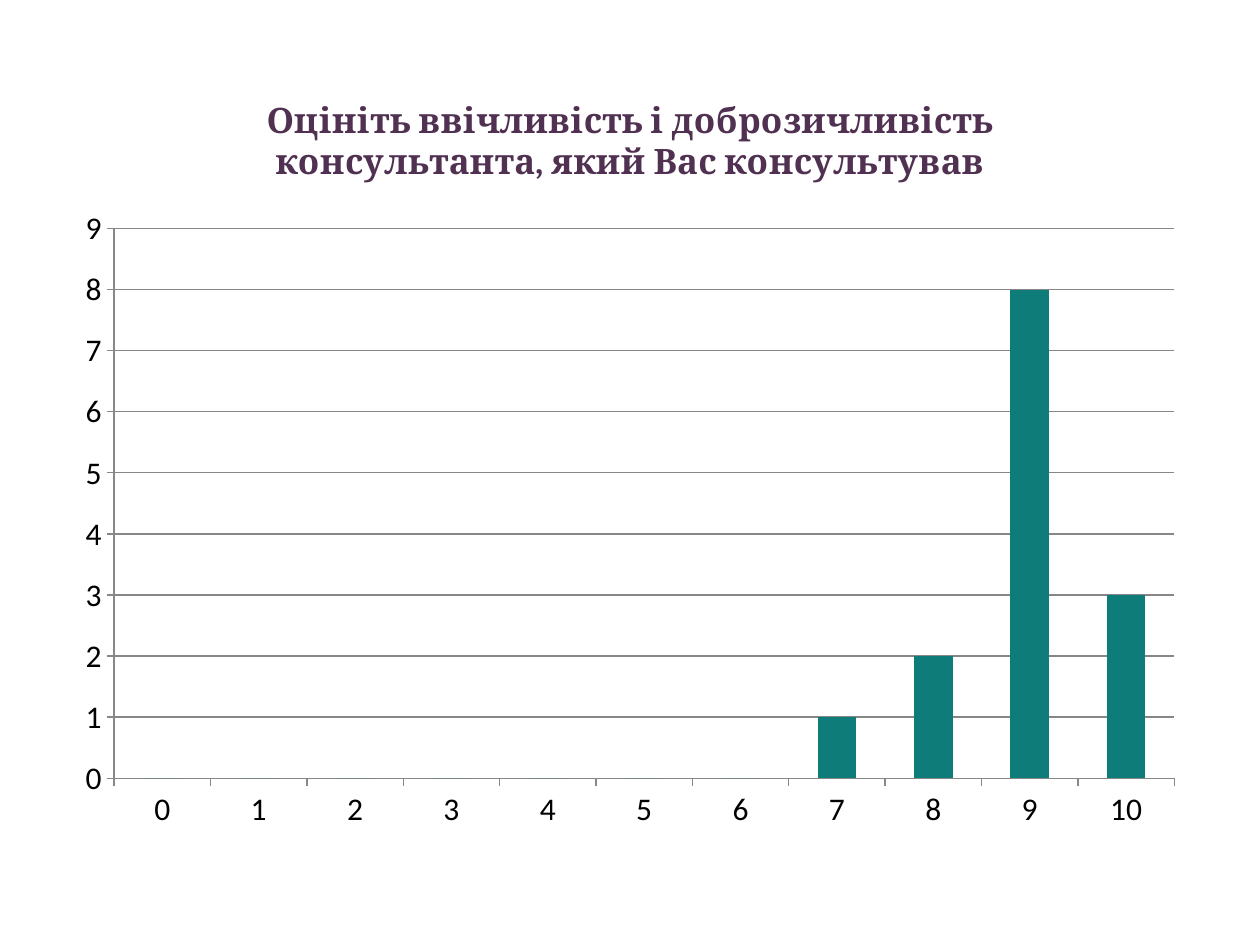
from pptx import Presentation
from pptx.chart.data import CategoryChartData
from pptx.dml.color import RGBColor
from pptx.enum.chart import XL_CHART_TYPE, XL_TICK_MARK
from pptx.util import Cm, Pt

BLACK = RGBColor(0x00, 0x00, 0x00)
GRAY = RGBColor(0x87, 0x87, 0x87)
PLUM = RGBColor(0x51, 0x31, 0x51)
TEAL = RGBColor(0x0E, 0x7C, 0x79)

QUESTION = "Оцініть ввічливість і доброзичливість консультанта, який Вас консультував"
ANSWERS = [0, 0, 0, 0, 0, 0, 0, 1, 2, 8, 3]


def format_font(font, name, size, color, bold=False):
    font.name = name
    font.size = Pt(size)
    font.color.rgb = color
    font.bold = bold


def write_text(text_frame, text, **font_format):
    run = text_frame.paragraphs[0].add_run()
    run.text = text
    format_font(run.font, **font_format)


def style_axis(axis, gridlines):
    axis.major_tick_mark = XL_TICK_MARK.OUTSIDE
    axis.minor_tick_mark = XL_TICK_MARK.NONE
    axis.format.line.color.rgb = GRAY
    axis.has_major_gridlines = gridlines
    if gridlines:
        axis.major_gridlines.format.line.color.rgb = GRAY


def add_rating_chart(slide, left, top, width, height):
    ratings = CategoryChartData(number_format="General")
    ratings.categories = [str(score) for score in range(len(ANSWERS))]
    ratings.add_series("Series 1", ANSWERS)
    chart = slide.shapes.add_chart(
        XL_CHART_TYPE.COLUMN_CLUSTERED, left, top, width, height, ratings
    ).chart
    format_font(chart.font, name="Calibri", size=18, color=BLACK)
    chart.has_legend = False
    chart.has_title = True
    chart.chart_title.include_in_layout = False
    write_text(chart.chart_title.text_frame, QUESTION,
               name="Cambria", size=20, color=PLUM, bold=True)

    style_axis(chart.category_axis, gridlines=False)
    style_axis(chart.value_axis, gridlines=True)
    chart.value_axis.minimum_scale = 0
    chart.value_axis.maximum_scale = 9
    chart.value_axis.major_unit = 1

    columns = chart.plots[0]
    columns.gap_width = 150
    columns.vary_by_categories = False
    answers = columns.series[0]
    answers.format.fill.solid()
    answers.format.fill.fore_color.rgb = TEAL


def main():
    presentation = Presentation()
    presentation.slide_width = Cm(25.4)
    presentation.slide_height = Cm(19.05)
    slide = presentation.slides.add_slide(presentation.slide_layouts[6])
    add_rating_chart(slide, Cm(1.27), Cm(1.4), Cm(22.86), Cm(15.62))
    presentation.save("out.pptx")


if __name__ == "__main__":
    main()
